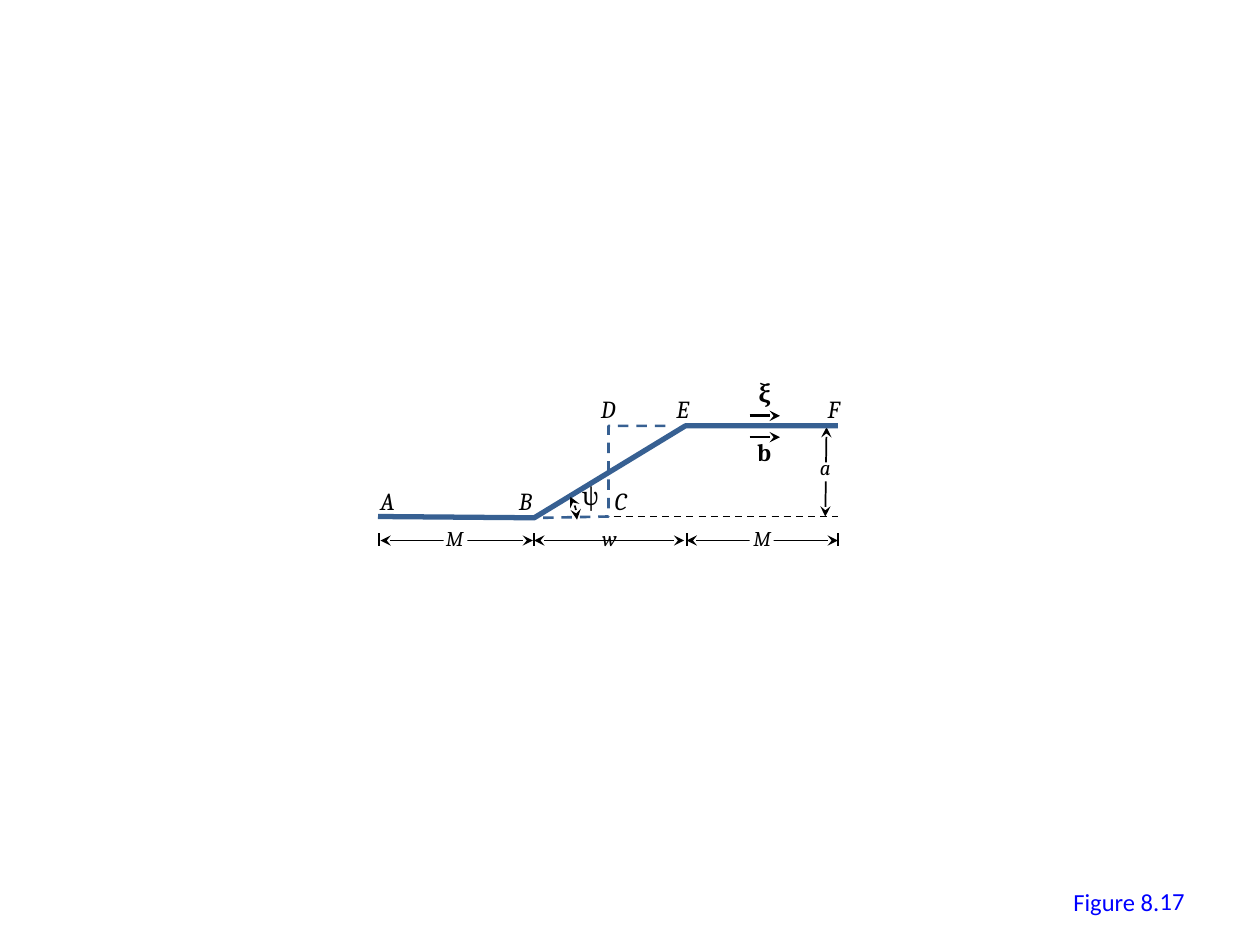
from pptx import Presentation
from pptx.dml.color import RGBColor
from pptx.enum.dml import MSO_LINE
from pptx.enum.shapes import MSO_CONNECTOR, MSO_SHAPE
from pptx.enum.text import MSO_ANCHOR, MSO_AUTO_SIZE, PP_ALIGN
from pptx.oxml.ns import qn
from pptx.util import Inches, Pt
from lxml import etree

STRAIGHT = MSO_CONNECTOR.STRAIGHT
DASH = MSO_LINE.DASH
COLORS = {"ink": "000000", "path": "376092", "caption": "0000FF", "mask": "FFFFFF"}
BOTH_ENDS = ("headEnd", "tailEnd")
END_ONLY = ("tailEnd",)

presentation = Presentation()
presentation.slide_width = Inches(10)
presentation.slide_height = Inches(7.5)
slide = presentation.slides.add_slide(presentation.slide_layouts[6])


def style_line(shape, color, width, dash=None, arrows=()):
    shape.line.color.rgb = RGBColor.from_string(COLORS[color])
    shape.line.width = Pt(width)
    if dash:
        shape.line.dash_style = dash
    line = shape.line._get_or_add_ln()
    for end in arrows:
        etree.SubElement(line, qn(f"a:{end}"), type="stealth")
    properties = shape._element.spPr
    if properties.find(qn("a:effectLst")) is None:
        etree.SubElement(properties, qn("a:effectLst"))


def add_text(text, box, size=14, font="Cambria", color="ink", bold=False, italic=False):
    shape = slide.shapes.add_textbox(*map(Inches, box))
    frame = shape.text_frame
    frame.word_wrap = False
    frame.auto_size = MSO_AUTO_SIZE.SHAPE_TO_FIT_TEXT
    run = frame.paragraphs[0].add_run()
    run.text = text
    run.font.name = font
    run.font.size = Pt(size)
    run.font.bold = bold
    run.font.italic = italic
    run.font.color.rgb = RGBColor.from_string(COLORS[color])
    return frame


# Caption and its number
add_text("Figure 8.", (8.42, 6.99, 0.89, 0.34), font="Calibri", color="caption")
number = add_text("17", (7.17, 6.95, 2.33, 0.4), font="Calibri", color="caption")
number.auto_size = MSO_AUTO_SIZE.NONE
number.word_wrap = True
number.vertical_anchor = MSO_ANCHOR.MIDDLE
number.paragraphs[0].alignment = PP_ALIGN.RIGHT

# Straight lines: x1, y1, x2, y2, width, dash, arrowheads
lines = [
    (5.95, 3.3, 6.19, 3.3, 1.5, None, END_ONLY),  # ξ direction
    (5.95, 3.47, 6.19, 3.47, 1.5, None, END_ONLY),  # b direction
    (6.55, 4.1, 6.56, 3.39, 1, None, BOTH_ENDS),  # height a
    (4.87, 4.1, 6.65, 4.1, 1, DASH, ()),  # base line
]
for left, right in [(3.02, 4.23), (4.24, 5.43), (5.45, 6.65)]:
    lines.append((left, 4.29, right, 4.29, 1, None, BOTH_ENDS))
for x in (3.01, 4.24, 5.45, 6.65):
    lines.append((x, 4.33, x, 4.23, 1, None, ()))
for x1, y1, x2, y2, width, dash, arrows in lines:
    connector = slide.shapes.add_connector(STRAIGHT, *map(Inches, (x1, y1, x2, y2)))
    style_line(connector, "ink", width, dash, arrows)

# White gaps behind the dimension labels
for left, top in [(3.52, 4.22), (5.95, 4.21), (6.46, 3.67)]:
    gap = slide.shapes.add_shape(
        MSO_SHAPE.RECTANGLE, Inches(left), Inches(top), Inches(0.19), Inches(0.15))
    gap.shadow.inherit = False
    gap.fill.solid()
    gap.fill.fore_color.rgb = RGBColor.from_string(COLORS["mask"])
    gap.line.fill.background()

# Dimension labels
for text, left, top, width in [("M", 3.44, 4.12, 0.39), ("w", 4.68, 4.12, 0.36),
                               ("M", 5.88, 4.12, 0.39), ("a", 6.41, 3.56, 0.33)]:
    add_text(text, (left, top, width, 0.3), size=12, italic=True)

# Point labels
for text, left, top, width in [("A", 2.92, 3.81, 0.37), ("B", 4.02, 3.81, 0.37),
                               ("C", 4.78, 3.81, 0.39), ("D", 4.67, 3.08, 0.4),
                               ("E", 5.27, 3.08, 0.37), ("F", 6.47, 3.08, 0.37)]:
    add_text(text, (left, top, width, 0.34), italic=True)

# Vector labels
add_text("b", (5.91, 3.42, 0.31, 0.34), bold=True)
add_text("ξ", (5.92, 2.95, 0.3, 0.34), bold=True)

# Solid path ABEF and dashed path BCDE
for points, width, dash in [
    ([(3, 4.1), (4.24, 4.11), (5.44, 3.38), (6.65, 3.38)], 3, None),
    ([(4.31, 4.11), (4.83, 4.1), (4.83, 3.38), (5.32, 3.38)], 1.5, DASH),
]:
    corners = [(Inches(x), Inches(y)) for x, y in points]
    builder = slide.shapes.build_freeform(*corners[0])
    builder.add_line_segments(corners[1:], close=False)
    route = builder.convert_to_shape()
    route.shadow.inherit = False
    route.fill.background()
    style_line(route, "path", width, dash)

# Angle ψ
arc = slide.shapes.add_shape(
    MSO_SHAPE.ARC, Inches(3.91), Inches(3.79), Inches(0.67), Inches(0.67))
arc.adjustments[0] = 196.296
arc.adjustments[1] = 0
arc.shadow.inherit = False
arc.fill.background()
style_line(arc, "ink", 1, arrows=BOTH_ENDS)
add_text("ψ", (4.52, 3.77, 0.34, 0.34))

presentation.save("out.pptx")
